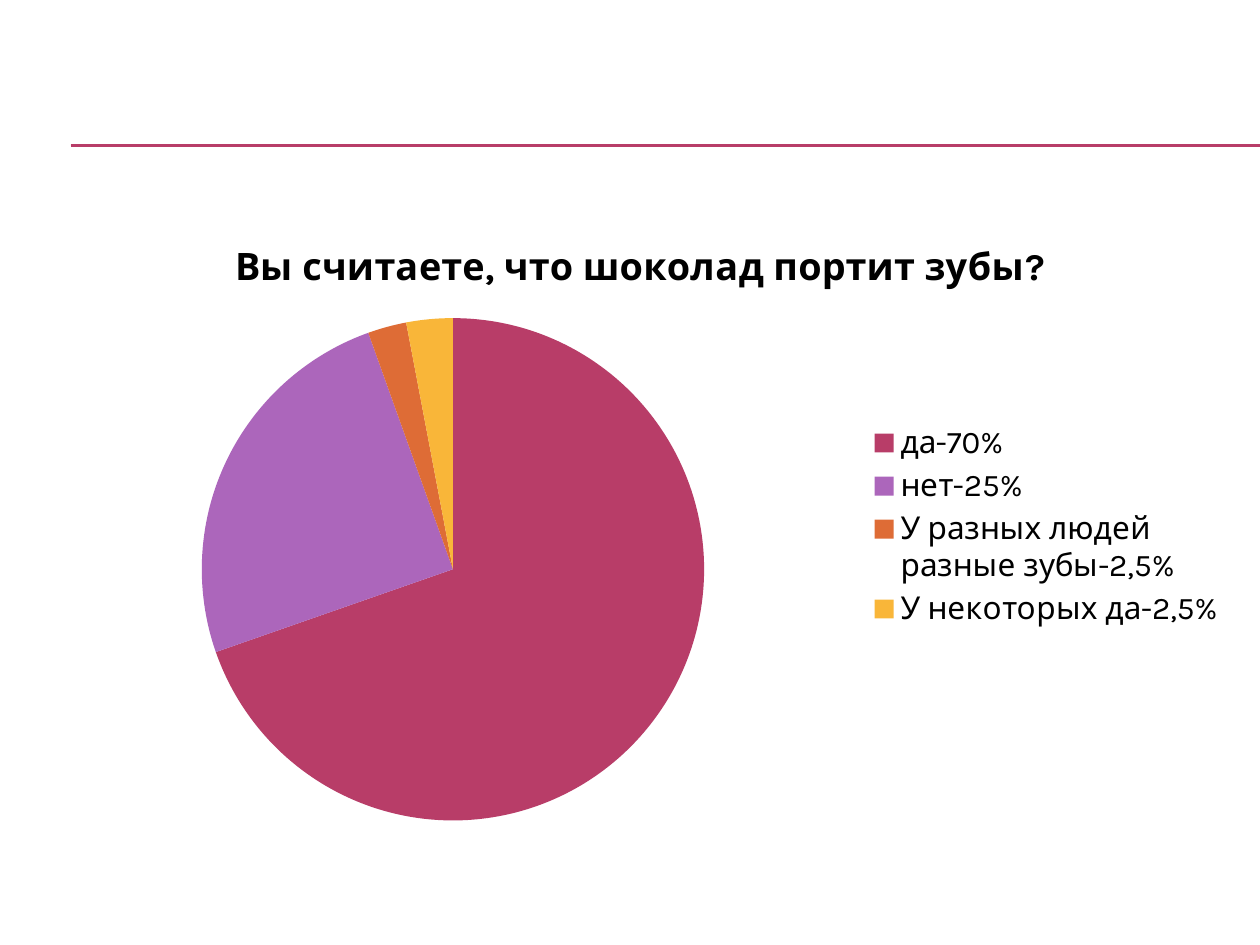
from lxml import etree
from pptx import Presentation
from pptx.chart.data import CategoryChartData
from pptx.dml.color import RGBColor
from pptx.enum.chart import XL_CHART_TYPE, XL_LEGEND_POSITION
from pptx.enum.shapes import MSO_CONNECTOR
from pptx.oxml.ns import qn
from pptx.util import Inches, Pt

PIE = XL_CHART_TYPE.PIE
LEGEND_RIGHT = XL_LEGEND_POSITION.RIGHT
STRAIGHT = MSO_CONNECTOR.STRAIGHT

BLACK = RGBColor(0x00, 0x00, 0x00)
RASPBERRY = RGBColor(0xB8, 0x3D, 0x68)
PURPLE = RGBColor(0xAC, 0x66, 0xBB)
ORANGE = RGBColor(0xDE, 0x6C, 0x36)
YELLOW = RGBColor(0xF9, 0xB6, 0x39)

FONT_NAME = "Karla"
QUESTION = "Вы считаете, что шоколад портит зубы?"
ANSWERS = [
    ("да-70%", 70, RASPBERRY),
    ("нет-25%", 25, PURPLE),
    ("У разных людей разные зубы-2,5%", 2.5, ORANGE),
    ("У некоторых да-2,5%", 3, YELLOW),
]


def style_font(font, size, bold=False):
    font.name = FONT_NAME
    font.size = Pt(size)
    font.bold = bold
    font.color.rgb = BLACK


def add_rule(slide, top):
    connector = slide.shapes.add_connector(
        STRAIGHT, Inches(0.56), Inches(top), Inches(10), Inches(top)
    )
    connector.line.color.rgb = RASPBERRY
    connector.line.width = Pt(0.75)
    etree.SubElement(connector._element.spPr, qn("a:effectLst"))


def add_answer_chart(slide):
    chart_data = CategoryChartData()
    chart_data.categories = [label for label, _, _ in ANSWERS]
    chart_data.add_series(QUESTION, [value for _, value, _ in ANSWERS])
    chart = slide.shapes.add_chart(
        PIE, Inches(0.33), Inches(1.7), Inches(9.5), Inches(4.95), chart_data
    ).chart
    style_font(chart.font, 18)

    chart.has_title = True
    title_frame = chart.chart_title.text_frame
    title_frame.text = QUESTION
    style_font(title_frame.paragraphs[0].runs[0].font, 21.6, bold=True)
    chart.chart_title.include_in_layout = False

    chart.has_legend = True
    chart.legend.position = LEGEND_RIGHT
    chart.legend.include_in_layout = False

    plot = chart.plots[0]
    plot.vary_by_categories = True
    for index, (_, _, color) in enumerate(ANSWERS):
        fill = plot.series[0].points[index].format.fill
        fill.solid()
        fill.fore_color.rgb = color


def main():
    presentation = Presentation()
    presentation.slide_width = Inches(10)
    presentation.slide_height = Inches(7.5)
    slide = presentation.slides.add_slide(presentation.slide_layouts[6])
    for top in (1.15, 1.16):
        add_rule(slide, top)
    add_answer_chart(slide)
    presentation.save("out.pptx")


if __name__ == "__main__":
    main()
